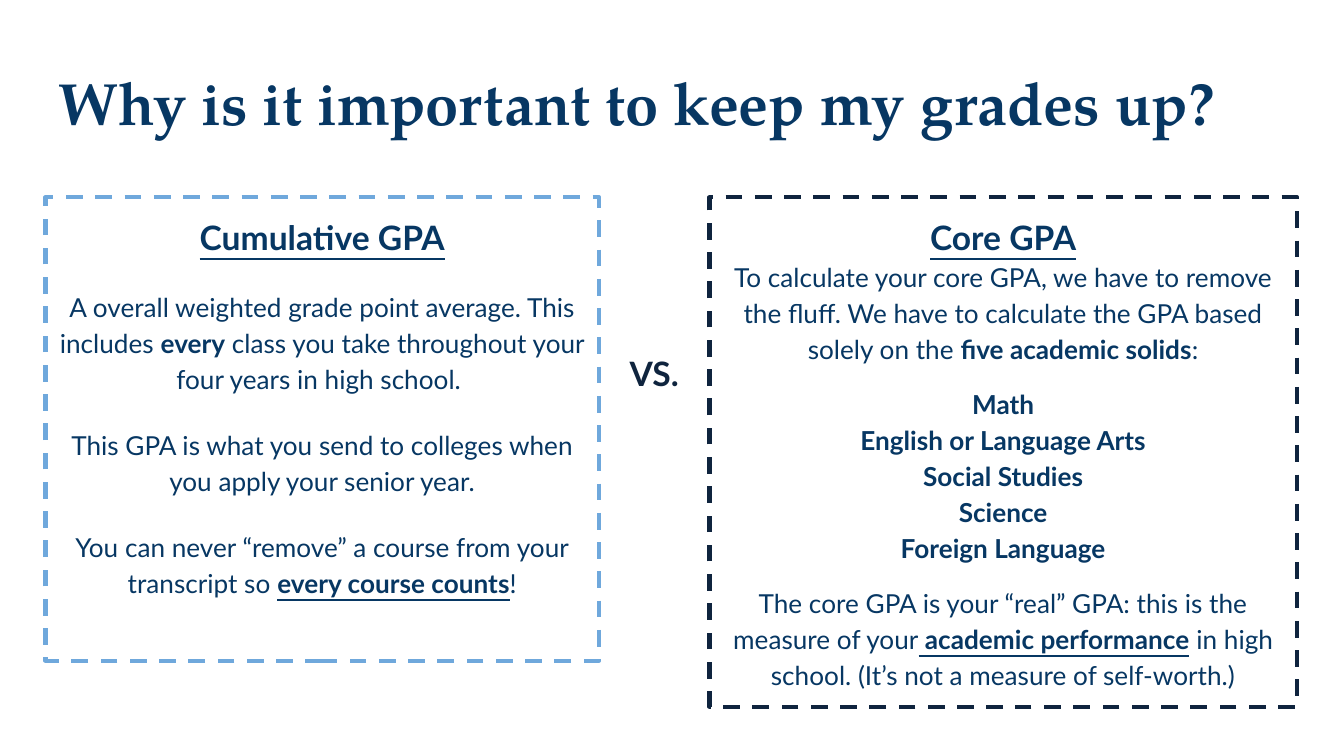
from pptx import Presentation
from pptx import util as u
from pptx.dml.color import RGBColor
from pptx.enum import dml, shapes, text

NAVY, INK, SKY = "073763", "0F243E", "6FA8DC"


def rgb(value):
    return RGBColor.from_string(value)


def write(tf, paragraphs, anchor, color=NAVY, name="Lato", align=text.PP_ALIGN.CENTER, spacing=1.0):
    tf.word_wrap = True
    tf.auto_size = text.MSO_AUTO_SIZE.NONE
    tf.vertical_anchor = anchor
    tf.margin_left = tf.margin_right = tf.margin_top = tf.margin_bottom = u.Cm(0.25)
    for i, (size, before, runs) in enumerate(paragraphs):
        p = tf.paragraphs[0] if i == 0 else tf.add_paragraph()
        p.alignment = align
        p.line_spacing = spacing
        p.space_before = u.Pt(before)
        p.font.name = name
        p.font.size = u.Pt(size)
        p.font.color.rgb = rgb(color)
        for words, style in runs:
            r = p.add_run()
            r.text = words
            r.font.bold = "b" in style
            r.font.underline = "u" in style


prs = Presentation()
prs.slide_width, prs.slide_height = u.Cm(25.4), u.Cm(14.29)
s = prs.slides.add_slide(prs.slide_layouts[5])

title = s.shapes.title
title.left, title.top, title.width, title.height = u.Cm(0.86), u.Cm(1.02), u.Cm(23.67), u.Cm(1.8)
write(title.text_frame, [(32, 0, [("Why is it important to keep my grades up?", "b")])],
      text.MSO_ANCHOR.MIDDLE, name="TeX Gyre Pagella", align=text.PP_ALIGN.LEFT)

cumulative = [
    (18, 0, [("Cumulative GPA", "bu")]),
    (14, 16, [("A overall weighted grade point average. This includes ", ""), ("every", "b"),
              (" class you take throughout your four years in high school. ", "")]),
    (14, 16, [("This GPA is what you send to colleges when you apply your senior year.", "")]),
    (14, 16, [("You can never “remove” a course from your transcript so ", ""),
              ("every course counts", "bu"), ("!", "")]),
]
subjects = ["Math", "English or Language Arts", "Social Studies", "Science", "Foreign Language"]
core = [
    (18, 0, [("Core GPA", "bu")]),
    (14, 0, [("To calculate your core GPA, we have to remove the fluff. "
              "We have to calculate the GPA based solely on the ", ""),
             ("five academic solids", "b"), (":", "")]),
    *[(14, 0 if i else 10, [(subject, "b")]) for i, subject in enumerate(subjects)],
    (14, 10, [("The core GPA is your “real” GPA: this is the measure of your", ""),
              (" academic performance", "bu"),
              (" in high school. (It’s not a measure of self-worth.)", "")]),
]

for left, width, height, border, paragraphs in [
    (0.86, 10.46, 8.76, SKY, cumulative),
    (13.41, 11.1, 9.63, INK, core),
]:
    sp = s.shapes.add_shape(shapes.MSO_SHAPE.RECTANGLE, u.Cm(left), u.Cm(3.73), u.Cm(width), u.Cm(height))
    sp.shadow.inherit = False
    sp.fill.background()
    sp.line.color.rgb = rgb(border)
    sp.line.width = u.Pt(2.25)
    sp.line.dash_style = dml.MSO_LINE.DASH
    write(sp.text_frame, paragraphs, text.MSO_ANCHOR.TOP, spacing=1.15)

versus = s.shapes.add_textbox(u.Cm(11.4), u.Cm(6.43), u.Cm(1.93), u.Cm(1.3))
write(versus.text_frame, [(18, 0, [("VS.", "b")])], text.MSO_ANCHOR.TOP, color=INK)

prs.save("out.pptx")
